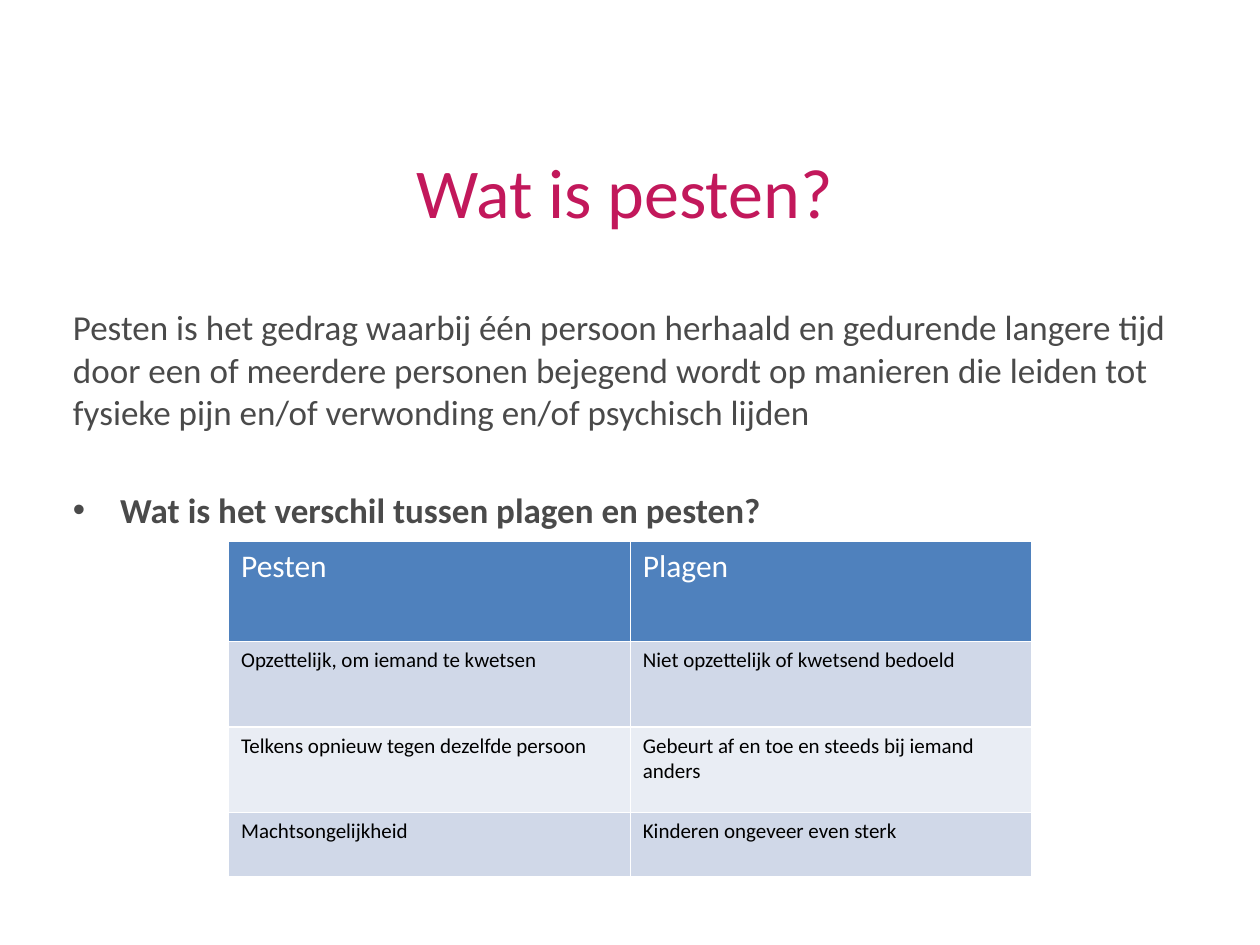
from pptx import Presentation
from pptx.dml.color import RGBColor
from pptx.enum.text import MSO_ANCHOR, PP_ALIGN
from pptx.oxml import parse_xml
from pptx.oxml.ns import nsdecls
from pptx.util import Pt

MAGENTA = RGBColor(0xC2, 0x18, 0x5B)
GREY = RGBColor(0x4A, 0x4A, 0x4A)
BLACK = RGBColor(0x00, 0x00, 0x00)
WHITE = RGBColor(0xFF, 0xFF, 0xFF)
HEADER_BLUE = RGBColor(0x4F, 0x81, 0xBD)
BANDS = (RGBColor(0xD0, 0xD8, 0xE8), RGBColor(0xE9, 0xED, 0xF4))

TITLE_FORMAT = {"name": "Calibri", "size": Pt(40), "bold": False}
BODY_FORMAT = {"name": "Calibri", "size": Pt(20), "bold": False}
QUESTION_FORMAT = {**BODY_FORMAT, "bold": True}
HEADER_FORMAT = {"name": "Calibri", "size": Pt(18), "bold": False}
CELL_FORMAT = {"name": "Calibri", "size": Pt(12), "bold": False}

DEFINITION = (
    "Pesten is het gedrag waarbij één persoon herhaald en gedurende langere tijd "
    "door een of meerdere personen bejegend wordt op manieren die leiden tot "
    "fysieke pijn en/of verwonding en/of psychisch lijden"
)
COMPARISON = (
    ("Pesten", "Plagen"),
    ("Opzettelijk, om iemand te kwetsen", "Niet opzettelijk of kwetsend bedoeld"),
    ("Telkens opnieuw tegen dezelfde persoon",
     "Gebeurt af en toe en steeds bij iemand anders"),
    ("Machtsongelijkheid", "Kinderen ongeveer even sterk"),
)
ROW_HEIGHTS = (57.4, 48.8, 48.8, 36.6)


def write(paragraph, text, font_format, color):
    """Put formatted text in a paragraph."""
    run = paragraph.add_run()
    run.text = text
    for key, value in font_format.items():
        setattr(run.font, key, value)
    run.font.color.rgb = color


def add_frame(slide, box):
    """Add a wrapping text box and return its text frame."""
    frame = slide.shapes.add_textbox(*map(Pt, box)).text_frame
    frame.word_wrap = True
    return frame


def add_title(slide, box):
    """Place the centred slide title."""
    frame = add_frame(slide, box)
    frame.vertical_anchor = MSO_ANCHOR.MIDDLE
    heading = frame.paragraphs[0]
    heading.alignment = PP_ALIGN.CENTER
    write(heading, "Wat is pesten?", TITLE_FORMAT, MAGENTA)


def add_explanation(slide, box):
    """Place the definition and the bulleted question below it."""
    frame = add_frame(slide, box)
    write(frame.paragraphs[0], DEFINITION, BODY_FORMAT, GREY)
    question = frame.add_paragraph()
    question.space_before = Pt(32)
    properties = question._p.get_or_add_pPr()
    properties.set("marL", str(Pt(27)))
    properties.set("indent", str(-Pt(27)))
    properties.append(parse_xml(f'<a:buFont {nsdecls("a")} typeface="Arial"/>'))
    properties.append(parse_xml(f'<a:buChar {nsdecls("a")} char="•"/>'))
    write(question, "Wat is het verschil tussen plagen en pesten?", QUESTION_FORMAT, GREY)


def add_borders(cell):
    """Draw white one-point borders around a cell."""
    properties = cell._tc.get_or_add_tcPr()
    for position, side in enumerate(("lnL", "lnR", "lnT", "lnB")):
        properties.insert(position, parse_xml(
            f'<a:{side} {nsdecls("a")} w="{Pt(1)}"><a:solidFill>'
            f'<a:srgbClr val="{WHITE}"/></a:solidFill></a:{side}>'))


def add_comparison(slide, box):
    """Place the table that sets bullying against teasing."""
    table = slide.shapes.add_table(
        len(COMPARISON), len(COMPARISON[0]), *map(Pt, box)).table
    for index, (texts, height) in enumerate(zip(COMPARISON, ROW_HEIGHTS)):
        table.rows[index].height = Pt(height)
        is_header = index == 0
        fill = HEADER_BLUE if is_header else BANDS[(index - 1) % 2]
        font_format = HEADER_FORMAT if is_header else CELL_FORMAT
        for cell, text in zip(table.rows[index].cells, texts):
            cell.fill.solid()
            cell.fill.fore_color.rgb = fill
            add_borders(cell)
            write(cell.text_frame.paragraphs[0], text, font_format,
                  WHITE if is_header else BLACK)


def main():
    """Build and save the slide."""
    deck = Presentation()
    deck.slide_width, deck.slide_height = Pt(720), Pt(540)
    slide = deck.slides.add_slide(deck.slide_layouts[6])
    add_title(slide, (33, 64, 648, 90))
    add_explanation(slide, (34.6, 171.3, 648, 128.2))
    add_comparison(slide, (130.6, 309.2, 459.2, sum(ROW_HEIGHTS)))
    deck.save("out.pptx")


if __name__ == "__main__":
    main()
